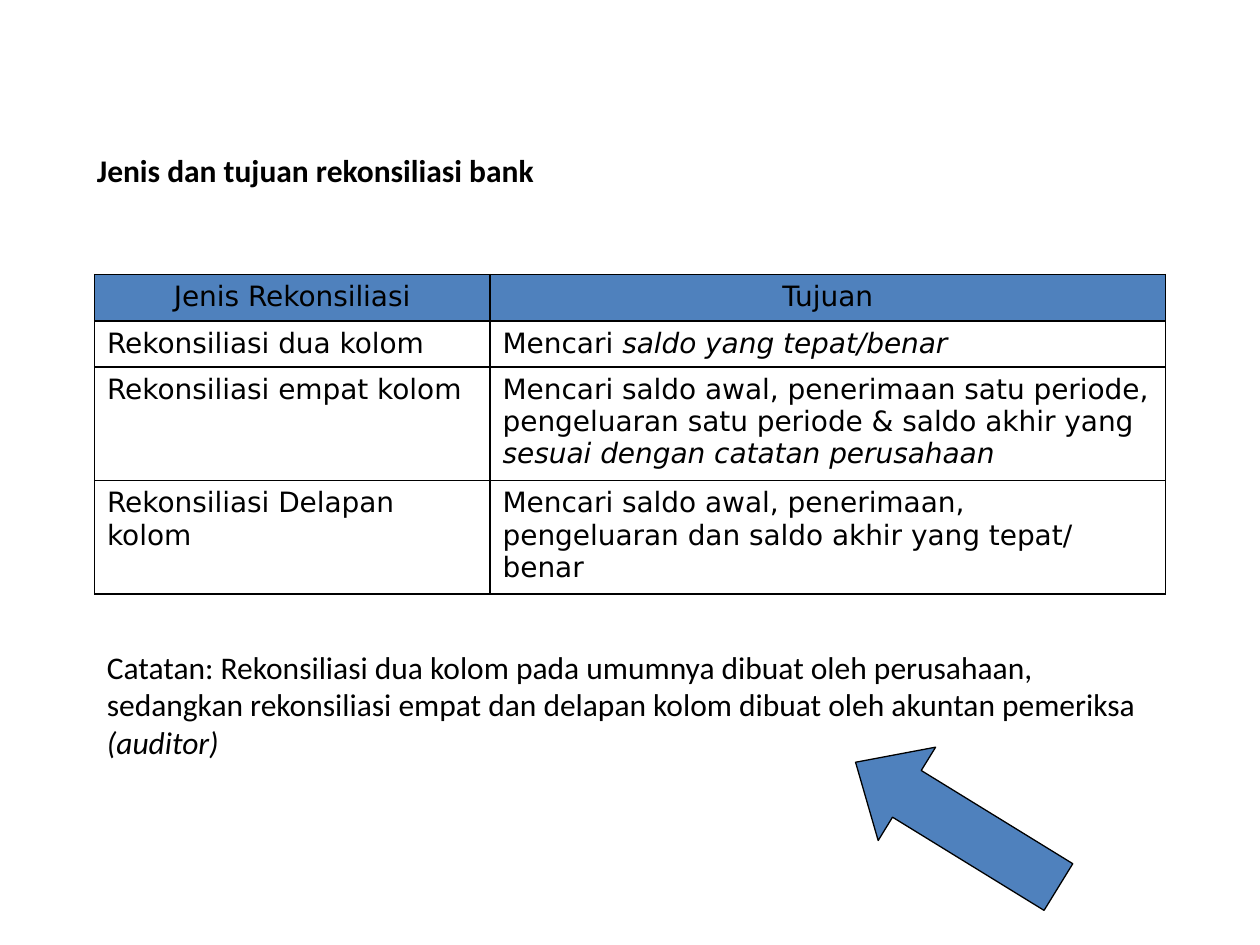
"""Build a slide on the kinds and aims of bank reconciliation."""
from lxml.etree import SubElement
from pptx import Presentation
from pptx.dml.color import RGBColor as Rgb
from pptx.enum.shapes import MSO_SHAPE as Shape
from pptx.enum.text import PP_ALIGN as Align
from pptx.oxml.ns import qn
from pptx.util import Inches, Pt

HUES = {"ink": "000000", "blue": "4F81BD"}
HEAD = ["Jenis Rekonsiliasi", "Tujuan"]
ROWS = [
    ("Rekonsiliasi dua kolom", "Mencari ", "saldo yang tepat/benar"),
    ("Rekonsiliasi empat kolom",
     "Mencari saldo awal, penerimaan satu periode, pengeluaran satu periode & saldo akhir yang ",
     "sesuai dengan catatan perusahaan"),
    ("Rekonsiliasi Delapan kolom",
     "Mencari saldo awal, penerimaan,  pengeluaran dan saldo akhir yang tepat/ benar", ""),
]
NOTE = ("Catatan: Rekonsiliasi dua kolom pada umumnya dibuat oleh perusahaan, "
        "sedangkan rekonsiliasi empat dan delapan kolom dibuat oleh akuntan pemeriksa ")


def hue(name):
    return Rgb.from_string(HUES[name])


def add_run(para, text, face, size, bold=False, slant=False):
    run = para.add_run()
    run.text = text
    font = run.font
    font.name, font.size = face, Pt(size)
    font.bold, font.italic = bold, slant
    font.color.rgb = hue("ink")


def add_text(slide, box, plain, slant="", bold=False):
    frame = slide.shapes.add_textbox(*map(Inches, box)).text_frame
    frame.word_wrap = True
    para = frame.paragraphs[0]
    add_run(para, plain, "Calibri", 18, bold)
    if slant:
        add_run(para, slant, "Calibri", 18, bold, True)


def add_edges(cell):
    props = cell._tc.get_or_add_tcPr()
    for side in "LRTB":
        line = SubElement(props, qn(f"a:ln{side}"), w=str(Pt(1)))
        fill = SubElement(line, qn("a:solidFill"))
        SubElement(fill, qn("a:srgbClr"), val=HUES["ink"])


def fill_cell(cell, plain, slant="", head=False):
    add_edges(cell)
    para = cell.text_frame.paragraphs[0]
    add_run(para, plain, "DejaVu Sans", 16)
    if slant:
        add_run(para, slant, "DejaVu Sans", 16, slant=True)
    if head:
        para.alignment = Align.CENTER
        cell.fill.solid()
        cell.fill.fore_color.rgb = hue("blue")
    else:
        cell.fill.background()


def add_grid(slide, box, widths, heights):
    size = len(heights), len(widths)
    table = slide.shapes.add_table(*size, *map(Inches, box)).table
    table.horz_banding = False
    for col, width in zip(table.columns, widths):
        col.width = Inches(width)
    for row, height in zip(table.rows, heights):
        row.height = Inches(height)
    for col, text in enumerate(HEAD):
        fill_cell(table.cell(0, col), text, head=True)
    for row, (kind, plain, slant) in enumerate(ROWS, 1):
        fill_cell(table.cell(row, 0), kind)
        fill_cell(table.cell(row, 1), plain, slant)


def add_arrow(slide, box, turn):
    arrow = slide.shapes.add_shape(Shape.LEFT_ARROW, *map(Inches, box))
    arrow.rotation = turn
    arrow.adjustments[0], arrow.adjustments[1] = 0.5, 0.55
    arrow.shadow.inherit = False
    arrow.fill.solid()
    arrow.fill.fore_color.rgb = hue("blue")
    arrow.line.color.rgb = hue("ink")
    arrow.line.width = Pt(0.75)


def main():
    deck = Presentation()
    deck.slide_width, deck.slide_height = Inches(10), Inches(7.5)
    slide = deck.slides.add_slide(deck.slide_layouts[6])
    add_text(slide, (0.67, 1.15, 8.58, 0.4), "Jenis dan tujuan rekonsiliasi bank", bold=True)
    add_grid(slide, (0.75, 2.18, 8.5, 2.53), (3.14, 5.36), (0.36, 0.36, 0.9, 0.9))
    add_text(slide, (0.75, 5.09, 8.5, 1), NOTE, "(auditor)")
    add_arrow(slide, (6.65, 6.11, 1.89, 0.87), 31.6)
    deck.save("out.pptx")


if __name__ == "__main__":
    main()
